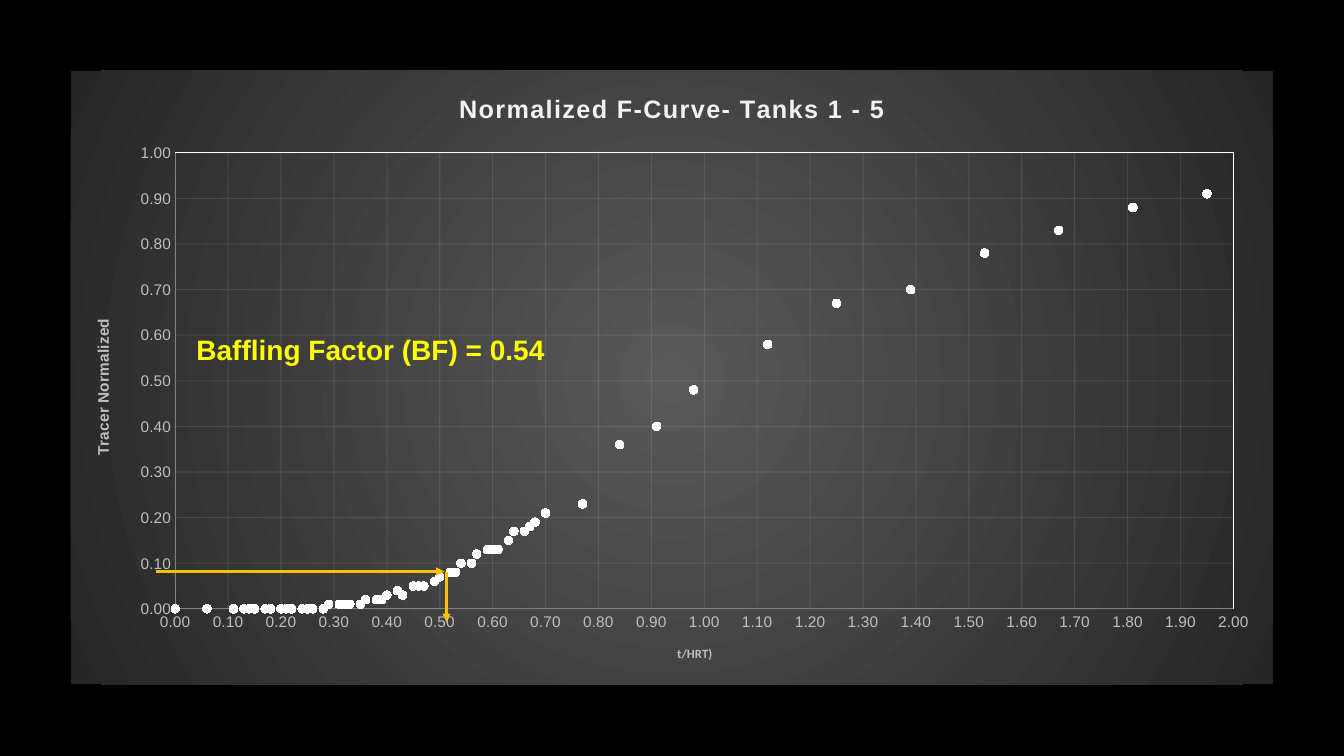
from dataclasses import dataclass
from typing import Any

import pptx
import pptx.chart.data
import pptx.dml.color
import pptx.enum.chart
import pptx.enum.dml
import pptx.enum.shapes
import pptx.enum.text
import pptx.oxml
import pptx.oxml.ns
import pptx.util

COLS, ROWS = 133.33, 75
WIDE, HIGH = pptx.util.Inches(13.33), pptx.util.Inches(7.5)


@dataclass(frozen=True)
class Theme:
    back: str = "000000"
    title: str = "F2F2F2"
    label: str = "BFBFBF"
    axis: str = "808080"
    grid: str = "F2F2F2"
    frame: str = "FFFFFF"
    arrow: str = "FFC000"
    note: str = "FFFF00"
    panel: tuple = ((0, "595959"), (100, "262626"))
    dots: tuple = ((0, "2451A1"), (80, "2F69D1"), (100, "2C69D5"))
    font: str = "Arial"
    small: str = "Calibri"
    head: float = 18
    big: float = 20
    text: float = 11
    base: float = 10
    tiny: float = 9
    thin: float = 0.75
    thick: float = 1.5


@dataclass(frozen=True)
class Arrow:
    left: float
    top: float
    right: float
    base: float


@dataclass(frozen=True)
class Scale:
    name: str
    top: float
    form: str
    font: str
    size: float


LOOK = Theme()
ARROWS = (Arrow(15.5, 56.7, 44.1, 56.7), Arrow(44.3, 56.7, 44.3, 61.7))
SCALES = (
    Scale("t/HRT)", 2, "#,##0.00", LOOK.small, LOOK.tiny),
    Scale("Tracer Normalized", 1, "0.00", LOOK.font, LOOK.text),
)
PLOT = {"x": 0.087, "y": 0.134, "w": 0.88, "h": 0.743}
TIMES = (
    0, 0.06, 0.11, 0.13, 0.14, 0.15, 0.17, 0.18, 0.2, 0.21, 0.22, 0.24,
    0.25, 0.26, 0.28, 0.29, 0.31, 0.32, 0.33, 0.35, 0.36, 0.38, 0.39, 0.4,
    0.42, 0.43, 0.45, 0.46, 0.47, 0.49, 0.5, 0.52, 0.53, 0.54, 0.56, 0.57,
    0.59, 0.6, 0.61, 0.63, 0.64, 0.66, 0.67, 0.68, 0.7, 0.77, 0.84, 0.91,
    0.98, 1.12, 1.25, 1.39, 1.53, 1.67, 1.81, 1.95, 2.09,
)
LEVELS = (
    0, 0, 0, 0, 0, 0, 0, 0, 0, 0, 0, 0,
    0, 0, 0, 0.01, 0.01, 0.01, 0.01, 0.01, 0.02, 0.02, 0.02, 0.03,
    0.04, 0.03, 0.05, 0.05, 0.05, 0.06, 0.07, 0.08, 0.08, 0.1, 0.1, 0.12,
    0.13, 0.13, 0.13, 0.15, 0.17, 0.17, 0.18, 0.19, 0.21, 0.23, 0.36, 0.4,
    0.48, 0.58, 0.67, 0.7, 0.78, 0.83, 0.88, 0.91, 0.94,
)


def col(step: float) -> int:
    return round(WIDE * step / COLS)


def row(step: float) -> int:
    return round(HIGH * step / ROWS)


def style(item: Any, **form: Any) -> None:
    for key, value in form.items():
        setattr(item, key, value)


def tint(code: str) -> pptx.dml.color.RGBColor:
    return pptx.dml.color.RGBColor.from_string(code)


def ink(font: Any, color: str, size: float, name: str, bold: bool = False) -> None:
    style(font, name=name, size=pptx.util.Pt(size), bold=bold)
    font.color.rgb = tint(color)


def pen(line: Any, color: str, width: float) -> None:
    line.width = pptx.util.Pt(width)
    line.color.rgb = tint(color)


def node(body: str) -> Any:
    head, tail = body.split(">", 1)
    slash = "/" if head.endswith("/") else ""
    names = pptx.oxml.ns.nsdecls("a", "c")
    return pptx.oxml.parse_xml(f"{head.rstrip('/')} {names}{slash}>{tail}")


def blend(stops: tuple, shade: str) -> str:
    marks = "".join(
        f'<a:gs pos="{at * 1000}"><a:srgbClr val="{code}"/></a:gs>' for at, code in stops
    )
    return f"<a:gradFill><a:gsLst>{marks}</a:gsLst>{shade}</a:gradFill>"


def label(frame: Any, text: str, color: str, size: float, name: str) -> Any:
    frame.text = text
    run = frame.paragraphs[0].runs[0]
    ink(run.font, color, size, name, True)
    return run


def ruler(axis: Any, scale: Scale) -> None:
    none = pptx.enum.chart.XL_TICK_MARK.NONE
    style(
        axis, minimum_scale=0, maximum_scale=scale.top, major_unit=0.1,
        major_tick_mark=none, minor_tick_mark=none, has_major_gridlines=True,
    )
    style(axis.tick_labels, number_format=scale.form, number_format_is_linked=False)
    ink(axis.tick_labels.font, LOOK.label, LOOK.text, LOOK.font)
    pen(axis.format.line, LOOK.axis, LOOK.thin)
    grid = axis.major_gridlines
    pen(grid.format.line, LOOK.grid, LOOK.thin)
    for color in axis._element.xpath("./c:majorGridlines//a:srgbClr"):
        color.append(node('<a:alpha val="10000"/>'))
    label(axis.axis_title.text_frame, scale.name, LOOK.label, scale.size, scale.font)


def curve(slide: Any) -> None:
    data = pptx.chart.data.XyChartData()
    line = data.add_series("Series 1")
    for time, level in zip(TIMES, LEVELS):
        line.add_data_point(time, level)
    kind = pptx.enum.chart.XL_CHART_TYPE.XY_SCATTER
    chart = slide.shapes.add_chart(
        kind, col(7), row(7), col(119.3), row(60.9), data
    ).chart
    style(chart, has_legend=False, has_title=True)
    ink(chart.font, LOOK.frame, LOOK.base, LOOK.small)
    title = label(
        chart.chart_title.text_frame, "Normalized F-Curve- Tanks 1 - 5",
        LOOK.title, LOOK.head, LOOK.font,
    )
    title.font._element.set("spc", "100")
    for axis, scale in zip((chart.category_axis, chart.value_axis), SCALES):
        ruler(axis, scale)
    turn = chart.value_axis.axis_title.text_frame._element.xpath(".//a:bodyPr")[0]
    style_map = {"rot": "-5400000", "vert": "horz"}
    for key, value in style_map.items():
        turn.set(key, value)

    chart.plots[0].vary_by_categories = False
    dots = chart.plots[0].series[0]
    dots.smooth = False
    dots.format.line.fill.background()
    style(dots.marker, style=pptx.enum.chart.XL_MARKER_STYLE.CIRCLE, size=6)
    dots.marker.format.line.fill.background()
    skin = dots._element.xpath("./c:marker/c:spPr")[0]
    skin.insert(0, node(blend(LOOK.dots, '<a:lin ang="16200000" scaled="0"/>')))

    root = chart.element
    glow = (
        '<a:path path="circle"><a:fillToRect l="50000" t="50000" '
        'r="50000" b="50000"/></a:path>'
    )
    panel = f"<c:spPr>{blend(LOOK.panel, glow)}<a:ln><a:noFill/></a:ln></c:spPr>"
    root.xpath("./c:txPr")[0].addprevious(node(panel))
    area = root.xpath(".//c:plotArea")[0]
    for old in area.xpath("./c:layout"):
        area.remove(old)
    modes = '<c:layoutTarget val="inner"/><c:xMode val="edge"/><c:yMode val="edge"/>'
    sides = "".join(f'<c:{key} val="{share}"/>' for key, share in PLOT.items())
    place = f"<c:layout><c:manualLayout>{modes}{sides}</c:manualLayout></c:layout>"
    area.insert(0, node(place))
    edge = f'<a:solidFill><a:srgbClr val="{LOOK.frame}"/></a:solidFill>'
    area.append(node(f'<c:spPr><a:noFill/><a:ln w="9525">{edge}</a:ln></c:spPr>'))


def point(slide: Any, arrow: Arrow) -> None:
    line = slide.shapes.add_connector(
        pptx.enum.shapes.MSO_CONNECTOR.STRAIGHT,
        col(arrow.left), row(arrow.top), col(arrow.right), row(arrow.base),
    )
    pen(line.line, LOOK.arrow, LOOK.thick)
    line.line._get_or_add_ln().append(node('<a:tailEnd type="triangle"/>'))
    line._element.spPr.append(node("<a:effectLst/>"))


def note(slide: Any) -> None:
    box = slide.shapes.add_textbox(col(18.5), row(32.5), col(36.8), row(4.4))
    fit = pptx.enum.text.MSO_AUTO_SIZE.SHAPE_TO_FIT_TEXT
    style(box.text_frame, word_wrap=False, auto_size=fit)
    label(box.text_frame, "Baffling Factor (BF) = 0.54", LOOK.note, LOOK.big, LOOK.font)


def main() -> None:
    deck = pptx.Presentation()
    style(deck, slide_width=WIDE, slide_height=HIGH)
    slide = deck.slides.add_slide(deck.slide_layouts[6])
    slide.background.fill.solid()
    slide.background.fill.fore_color.rgb = tint(LOOK.back)
    curve(slide)
    for arrow in ARROWS:
        point(slide, arrow)
    note(slide)
    deck.save("out.pptx")


if __name__ == "__main__":
    main()
